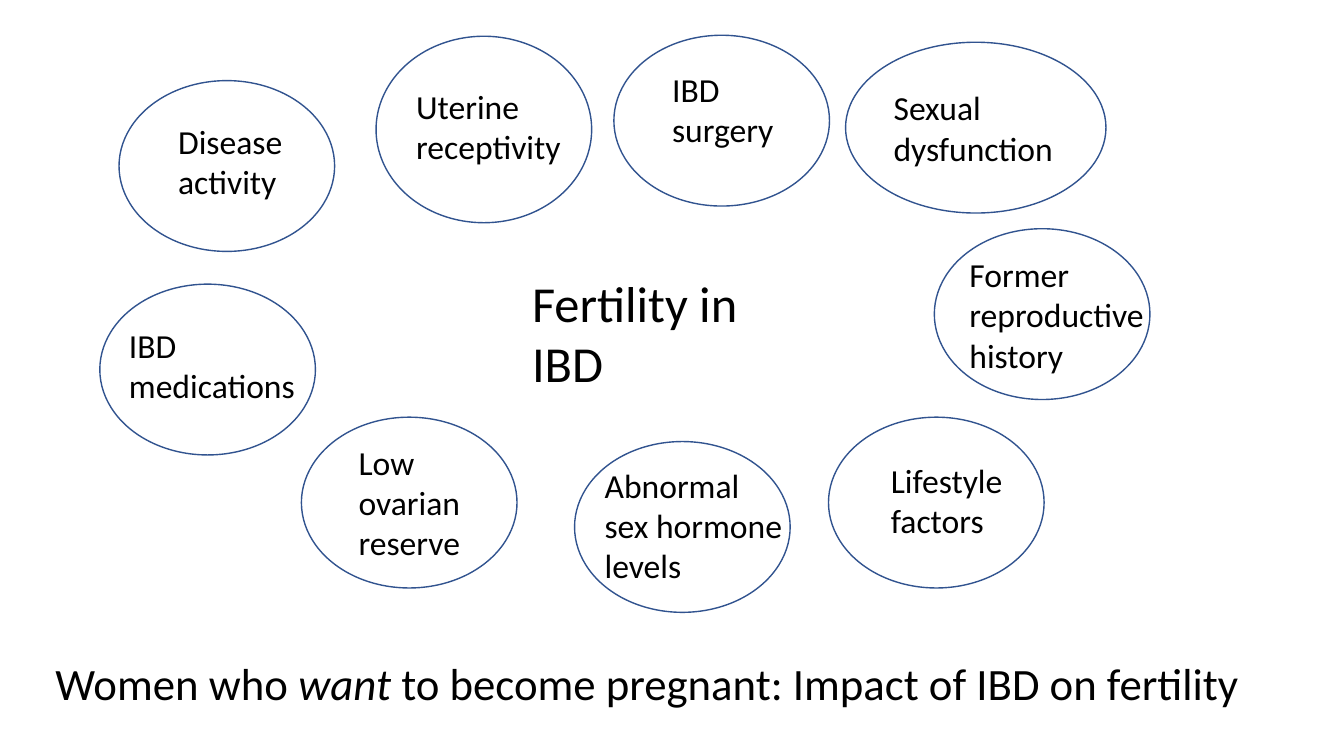
"""Build a slide of the factors that surround fertility in IBD."""
import dataclasses

import pptx
import pptx.dml.color
import pptx.enum.shapes
import pptx.enum.text
import pptx.shapes.autoshape
import pptx.slide
import pptx.util

Pt = pptx.util.Pt
COLOURS = {"outline": "31538F", "text": "000000"}
FONT = "Calibri"
LABEL_SIZE = 24


@dataclasses.dataclass(frozen=True)
class Span:
    """A run of text."""

    text: str
    italic: bool = False


@dataclasses.dataclass(frozen=True)
class Frame:
    """A rectangle in points."""

    left: float
    top: float
    width: float = 154
    height: float = 122

    def lengths(self) -> tuple[pptx.util.Length, ...]:
        """Return left, top, width and height as lengths."""
        return tuple(Pt(value) for value in dataclasses.astuple(self))


@dataclasses.dataclass(frozen=True)
class Factor:
    """An oval and its label, which sits inside the oval when it has no frame."""

    lines: tuple[str, ...]
    oval: Frame
    label: Frame | None = None


FACTORS = (
    Factor(("Disease activity",), Frame(85, 57.6), Frame(120.2, 82.8, 96.5, 65.5)),
    Factor(("Uterine receptivity",), Frame(268.6, 25.9, height=133.2), Frame(290.2, 57.6, 120.2, 65.5)),
    Factor(("IBD surgery",), Frame(438.5, 25.2), Frame(473, 45.4, 108.7, 65.5)),
    Factor(("Sexual dysfunction",), Frame(604, 30.2, width=186)),
    Factor(("Former", "reproductive", "history"), Frame(667.4, 163.4), Frame(685.4, 177.8, 177.8, 94.3)),
    Factor(("Lifestyle factors",), Frame(591.8, 298), Frame(629.3, 324.7, 96.5, 65.5)),
    Factor(("Abnormal sex hormone levels",), Frame(410.4, 315.4), Frame(424.8, 328.3, 146.2, 94.3)),
    Factor(("Low ovarian reserve",), Frame(215.3, 298), Frame(249.1, 311.8, 96.5, 94.3)),
    Factor(("IBD medications",), Frame(71.3, 203), Frame(85, 228.2, 140.4, 65.5)),
)
CENTRE = Frame(373, 190.8, 185, 94.3)
TITLE = Frame(32.4, 464.4, 895, 46)
TITLE_SPANS = (
    Span("Women who "),
    Span("want", italic=True),
    Span(" to become pregnant: Impact of IBD on fertility"),
)


def colour(name: str) -> pptx.dml.color.RGBColor:
    """Look up a named colour."""
    return pptx.dml.color.RGBColor.from_string(COLOURS[name])


def write(
    box: pptx.shapes.autoshape.Shape,
    lines: tuple[tuple[Span, ...], ...],
    size: float,
    anchor: pptx.enum.text.MSO_ANCHOR = pptx.enum.text.MSO_ANCHOR.TOP,
) -> None:
    """Write left-aligned paragraphs into a shape."""
    frame = box.text_frame
    frame.word_wrap = True
    frame.vertical_anchor = anchor
    for index, spans in enumerate(lines):
        para = frame.add_paragraph() if index else frame.paragraphs[0]
        para.alignment = pptx.enum.text.PP_ALIGN.LEFT
        para.line_spacing = 1.0
        for item in spans:
            span = para.add_run()
            span.text = item.text
            span.font.name = FONT
            span.font.size = Pt(size)
            span.font.italic = item.italic
            span.font.color.rgb = colour("text")


def add_label(page: pptx.slide.Slide, frame: Frame, lines: tuple[str, ...], size: float) -> None:
    """Add a text box that grows with its text."""
    box = page.shapes.add_textbox(*frame.lengths())
    write(box, tuple((Span(line),) for line in lines), size)
    box.text_frame.auto_size = pptx.enum.text.MSO_AUTO_SIZE.SHAPE_TO_FIT_TEXT


def add_factor(page: pptx.slide.Slide, factor: Factor) -> None:
    """Add an outlined oval with its label."""
    oval = page.shapes.add_shape(pptx.enum.shapes.MSO_SHAPE.OVAL, *factor.oval.lengths())
    oval.shadow.inherit = False
    oval.fill.background()
    oval.line.color.rgb = colour("outline")
    oval.line.width = Pt(1)
    if factor.label:
        add_label(page, factor.label, factor.lines, LABEL_SIZE)
    else:
        lines = tuple((Span(line),) for line in factor.lines)
        write(oval, lines, LABEL_SIZE, pptx.enum.text.MSO_ANCHOR.MIDDLE)


def set_title(page: pptx.slide.Slide) -> None:
    """Place and fill the title at the foot of the slide."""
    title = page.shapes.title
    title.left, title.top, title.width, title.height = TITLE.lengths()
    write(title, (TITLE_SPANS,), 32)
    title.text_frame.auto_size = pptx.enum.text.MSO_AUTO_SIZE.SHAPE_TO_FIT_TEXT


def main() -> None:
    """Build and save the deck."""
    deck = pptx.Presentation()
    deck.slide_width, deck.slide_height = Pt(960), Pt(540)
    page = deck.slides.add_slide(deck.slide_layouts[5])
    set_title(page)
    add_label(page, CENTRE, ("Fertility in IBD",), 36)
    for factor in FACTORS:
        add_factor(page, factor)
    deck.save("out.pptx")


if __name__ == "__main__":
    main()
